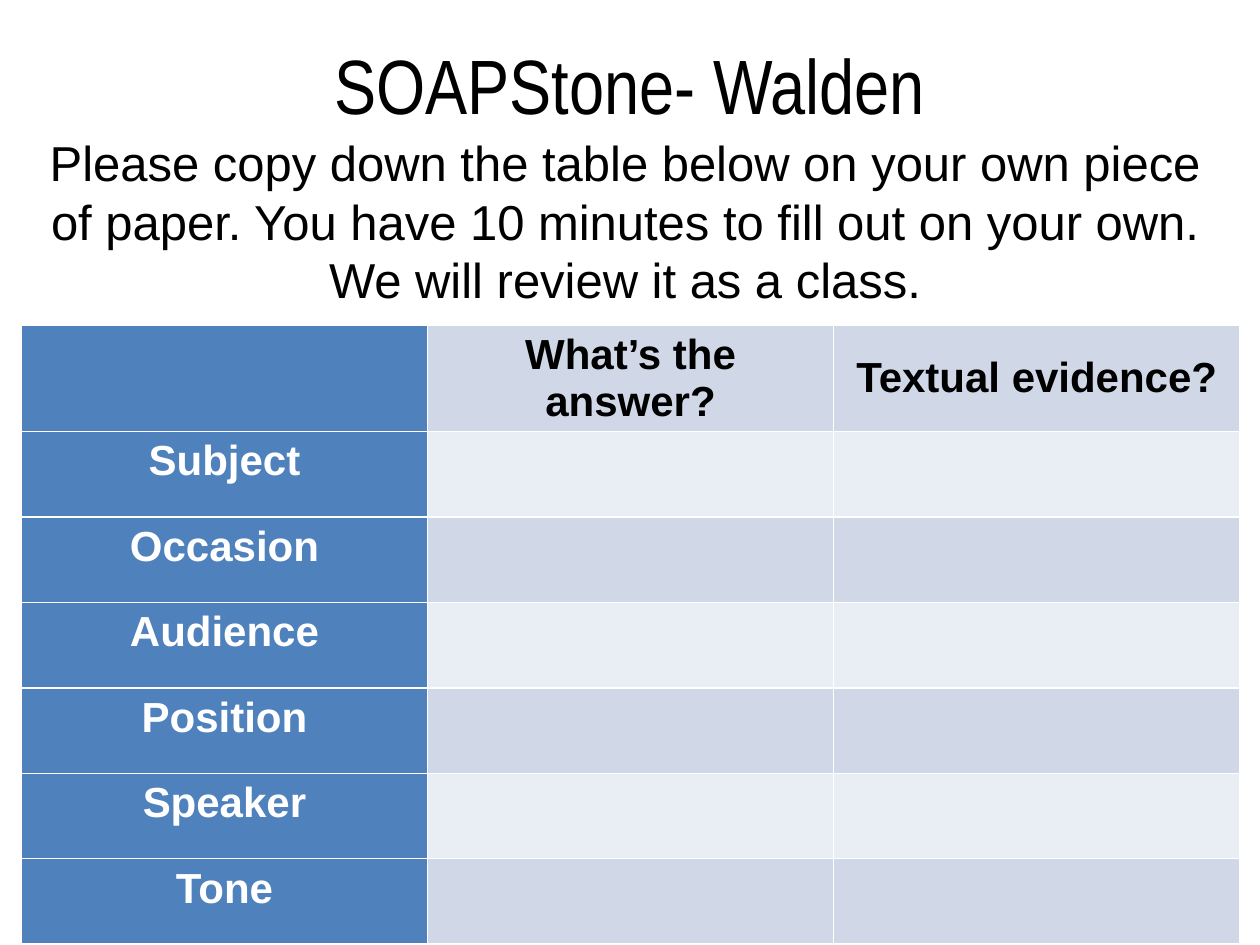
from lxml.etree import SubElement
from pptx import Presentation
from pptx.dml.color import RGBColor
from pptx.enum.text import MSO_ANCHOR, PP_ALIGN
from pptx.oxml.ns import qn
from pptx.util import Inches, Pt

TITLE = "SOAPStone- Walden"
INSTRUCTIONS = (
    "Please copy down the table below on your own piece of paper. "
    "You have 10 minutes to fill out on your own. We will review it as a class."
)
HEADERS = ["", "What’s the answer?", "Textual evidence?"]
TOPICS = ["Subject", "Occasion", "Audience", "Position", "Speaker", "Tone"]
COLORS = {
    "text": "000000",
    "white": "FFFFFF",
    "topic": "4F81BD",
    "dark_band": "D0D8E8",
    "light_band": "E9EDF4",
}
TABLE_BOX = (0.17, 2.58, 9.67, 4.75)


def rgb(name):
    return RGBColor.from_string(COLORS[name])


def write(text_frame, text, size, color="text", font_name="Arial", bold=False):
    text_frame.text = text
    paragraph = text_frame.paragraphs[0]
    paragraph.alignment = PP_ALIGN.CENTER
    for run in paragraph.runs:
        font = run.font
        font.name, font.size, font.bold = font_name, Pt(size), bold
        font.color.rgb = rgb(color)


def add_borders(cell):
    properties = cell._tc.get_or_add_tcPr()
    for index, side in enumerate(("lnL", "lnR", "lnT", "lnB")):
        line = properties.makeelement(qn(f"a:{side}"), {"w": str(Pt(1))})
        fill = SubElement(line, qn("a:solidFill"))
        SubElement(fill, qn("a:srgbClr"), val=COLORS["white"])
        properties.insert(index, line)


def add_title(slide):
    title = slide.shapes.title
    title.left, title.top = Inches(0), Inches(0.25)
    title.width, title.height = Inches(10), Inches(1.08)
    title.text_frame.vertical_anchor = MSO_ANCHOR.TOP
    write(title.text_frame, TITLE, 44, font_name="Arial Narrow")


def add_instructions(slide):
    box = slide.shapes.add_textbox(Inches(0.17), Inches(1), Inches(9.58), Inches(1.51))
    box.text_frame.word_wrap = True
    write(box.text_frame, INSTRUCTIONS, 28)


def add_table(slide):
    rows = [HEADERS] + [[topic, "", ""] for topic in TOPICS]
    left, top, width, height = map(Inches, TABLE_BOX)
    table = slide.shapes.add_table(len(rows), len(HEADERS), left, top, width, height).table
    for row_index, row in enumerate(rows):
        band = "light_band" if row_index % 2 else "dark_band"
        for column_index, text in enumerate(row):
            cell = table.cell(row_index, column_index)
            cell.fill.solid()
            cell.fill.fore_color.rgb = rgb(band if column_index else "topic")
            cell.vertical_anchor = MSO_ANCHOR.TOP if row_index else MSO_ANCHOR.MIDDLE
            write(cell.text_frame, text, 24, "text" if column_index else "white", bold=True)
            add_borders(cell)


def main():
    """Build the SOAPStone worksheet slide."""
    presentation = Presentation()
    presentation.slide_width, presentation.slide_height = Inches(10), Inches(7.5)
    slide = presentation.slides.add_slide(presentation.slide_layouts[5])
    add_table(slide)
    add_title(slide)
    add_instructions(slide)
    presentation.save("out.pptx")


if __name__ == "__main__":
    main()
